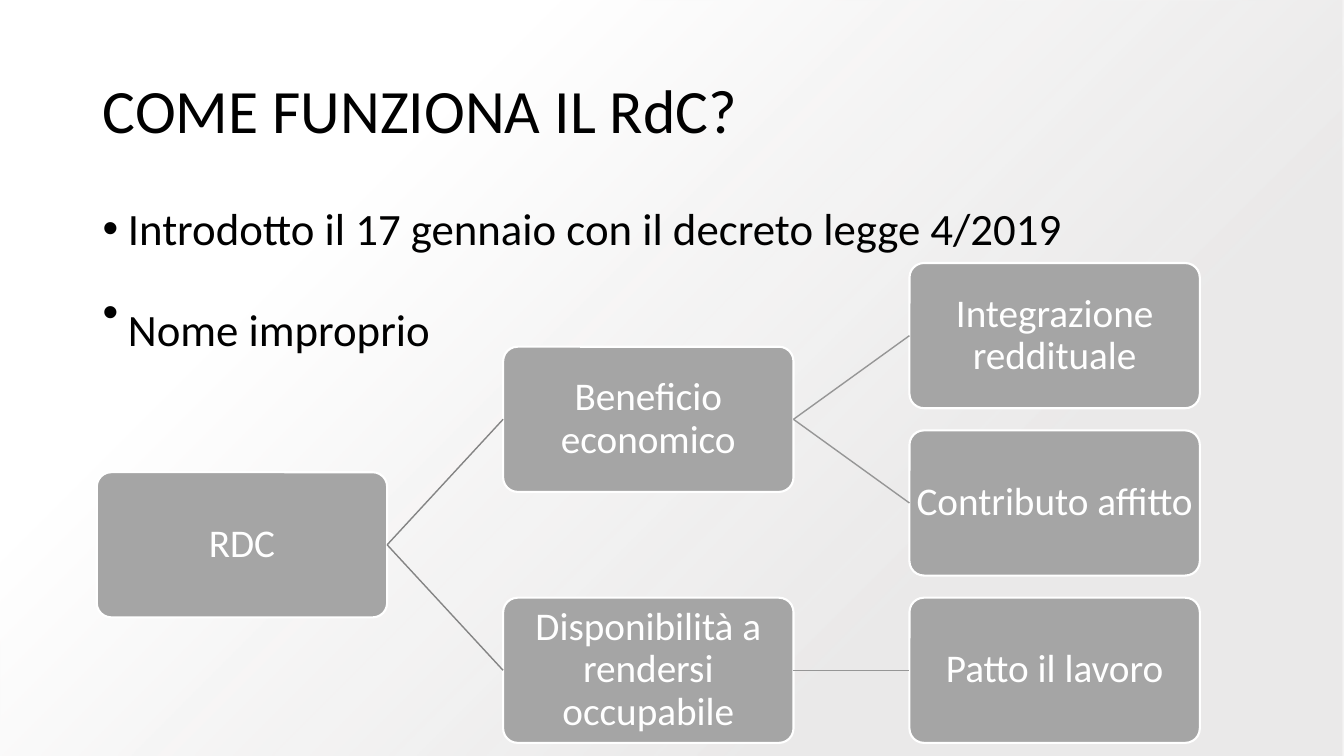
from dataclasses import dataclass

from lxml.etree import SubElement
from pptx import Presentation
from pptx.dml.color import RGBColor
from pptx.enum.shapes import MSO_CONNECTOR, MSO_SHAPE
from pptx.enum.text import MSO_ANCHOR, PP_ALIGN
from pptx.oxml import parse_xml
from pptx.oxml.ns import nsdecls, qn
from pptx.shapes.autoshape import Shape
from pptx.slide import Slide
from pptx.text.text import TextFrame
from pptx.util import Inches, Pt


@dataclass(frozen=True)
class Theme:
    """Colours, font and type sizes of the slide."""

    font: str = "Calibri"
    ink: str = "000000"
    paper: str = "FFFFFF"
    shade: str = "E7E6E6"
    box: str = "A5A5A5"
    branch_lines: tuple[str, ...] = ("848484", "969696")
    title_size: int = 44
    bullet_size: int = 32
    spacer_size: int = 64
    box_size: int = 28


@dataclass(frozen=True)
class Grid:
    """Columns and rows of the tree, in inches."""

    left: float = 0.96
    top: float = 2.61
    column: float = 4.03
    row: float = 1.66
    box_width: float = 2.88
    box_height: float = 1.44


@dataclass(frozen=True)
class Node:
    """A tree box; a leaf has a row, a parent is centred on its children."""

    text: str
    leaf_row: float = 0
    children: tuple["Node", ...] = ()

    @property
    def row(self) -> float:
        """Return the node's row in the grid."""
        if not self.children:
            return self.leaf_row
        return sum(child.row for child in self.children) / len(self.children)


THEME = Theme()
GRID = Grid()
MARGIN, CONTENT_WIDTH = 0.92, 11.5
TITLE = "COME FUNZIONA IL RdC?"
BULLETS = ("Introdotto il 17 gennaio con il decreto legge 4/2019", "Nome improprio")
TREE = Node("RDC", children=(
    Node("Beneficio economico", children=(
        Node("Integrazione reddituale", 0),
        Node("Contributo affitto", 1),
    )),
    Node("Disponibilità a rendersi occupabile", children=(
        Node("Patto il lavoro", 2),
    )),
))


def write(frame: TextFrame, text: str, *, size: int, color: str = THEME.ink,
          align: PP_ALIGN = PP_ALIGN.LEFT, space_before: float = 0,
          bullet: bool = False, new_paragraph: bool = True) -> None:
    """Add formatted text to a frame, in a new paragraph or the last one."""
    paragraph = frame.paragraphs[-1]
    if new_paragraph and paragraph.runs:
        paragraph = frame.add_paragraph()
    if new_paragraph:
        paragraph.alignment = align
        paragraph.line_spacing = 0.9
        paragraph.space_before = Pt(space_before)
    if bullet:
        properties = paragraph._p.get_or_add_pPr()
        properties.set("marL", str(Inches(0.25)))
        properties.set("indent", str(-Inches(0.25)))
        SubElement(properties, qn("a:buFont"), typeface="Arial")
        SubElement(properties, qn("a:buChar"), char="•")
    run = paragraph.add_run()
    run.text = text
    run.font.name = THEME.font
    run.font.size = Pt(size)
    run.font.color.rgb = RGBColor.from_string(color)


def add_background(slide: Slide, width: int, height: int) -> None:
    """Lay a radial gradient rectangle behind everything else."""
    background = slide.shapes.add_shape(MSO_SHAPE.RECTANGLE, 0, 0, width, height)
    background.shadow.inherit = False
    background.line.fill.background()
    background.fill.background()
    properties = background._element.spPr
    gradient = parse_xml(
        f'<a:gradFill {nsdecls("a")} rotWithShape="1"><a:gsLst>'
        f'<a:gs pos="28000"><a:srgbClr val="{THEME.shade}"><a:alpha val="84000"/></a:srgbClr></a:gs>'
        f'<a:gs pos="74000"><a:srgbClr val="{THEME.paper}"/></a:gs></a:gsLst>'
        '<a:path path="circle"><a:fillToRect l="100000" t="100000"/></a:path></a:gradFill>')
    properties.replace(properties.find(qn("a:noFill")), gradient)
    background._element.getparent().insert(2, background._element)


def add_heading(slide: Slide) -> None:
    """Place and fill the title placeholder."""
    title = slide.shapes.title
    title.left, title.top = Inches(MARGIN), Inches(0.4)
    title.width, title.height = Inches(CONTENT_WIDTH), Inches(1.45)
    title.text_frame.vertical_anchor = MSO_ANCHOR.MIDDLE
    write(title.text_frame, TITLE, size=THEME.title_size)


def add_bullets(slide: Slide) -> None:
    """Add the bullet list, whose last line is made taller by a large space."""
    box = slide.shapes.add_textbox(
        Inches(MARGIN), Inches(2), Inches(CONTENT_WIDTH), Inches(1.91))
    frame = box.text_frame
    frame.word_wrap = True
    for text in BULLETS:
        write(frame, text, size=THEME.bullet_size, space_before=10, bullet=True)
    write(frame, " ", size=THEME.spacer_size, new_paragraph=False)


def add_box(slide: Slide, node: Node, column: int) -> Shape:
    """Draw one tree box in its grid cell."""
    box = slide.shapes.add_shape(
        MSO_SHAPE.ROUNDED_RECTANGLE,
        Inches(GRID.left + column * GRID.column), Inches(GRID.top + node.row * GRID.row),
        Inches(GRID.box_width), Inches(GRID.box_height))
    box.adjustments[0] = 0.1
    box.shadow.inherit = False
    box.fill.solid()
    box.fill.fore_color.rgb = RGBColor.from_string(THEME.box)
    box.line.color.rgb = RGBColor.from_string(THEME.paper)
    box.line.width = Pt(1.5)
    frame = box.text_frame
    frame.word_wrap = True
    frame.vertical_anchor = MSO_ANCHOR.MIDDLE
    frame.margin_left = frame.margin_right = Inches(0.02)
    frame.margin_top = frame.margin_bottom = Inches(0.06)
    write(frame, node.text, size=THEME.box_size, color=THEME.paper, align=PP_ALIGN.CENTER)
    return box


def add_branch(slide: Slide, parent: Shape, child: Shape, color: str) -> None:
    """Join the right side of a parent to the left side of its child."""
    branch = slide.shapes.add_connector(MSO_CONNECTOR.STRAIGHT, 0, 0, 0, 0)
    branch.begin_connect(parent, 3)
    branch.end_connect(child, 1)
    branch.line.color.rgb = RGBColor.from_string(color)
    branch.line.width = Pt(1)
    SubElement(branch._element.spPr, qn("a:effectLst"))


def add_tree(slide: Slide, node: Node, column: int = 0) -> Shape:
    """Draw a node, its descendants and the branches between them."""
    box = add_box(slide, node, column)
    for child in node.children:
        child_box = add_tree(slide, child, column + 1)
        add_branch(slide, box, child_box, THEME.branch_lines[column])
    return box


def main() -> None:
    """Build and save the presentation."""
    presentation = Presentation()
    presentation.slide_width, presentation.slide_height = Inches(13.33), Inches(7.5)
    slide = presentation.slides.add_slide(presentation.slide_layouts[5])
    add_background(slide, presentation.slide_width, presentation.slide_height)
    add_heading(slide)
    add_bullets(slide)
    add_tree(slide, TREE)
    presentation.save("out.pptx")


if __name__ == "__main__":
    main()
